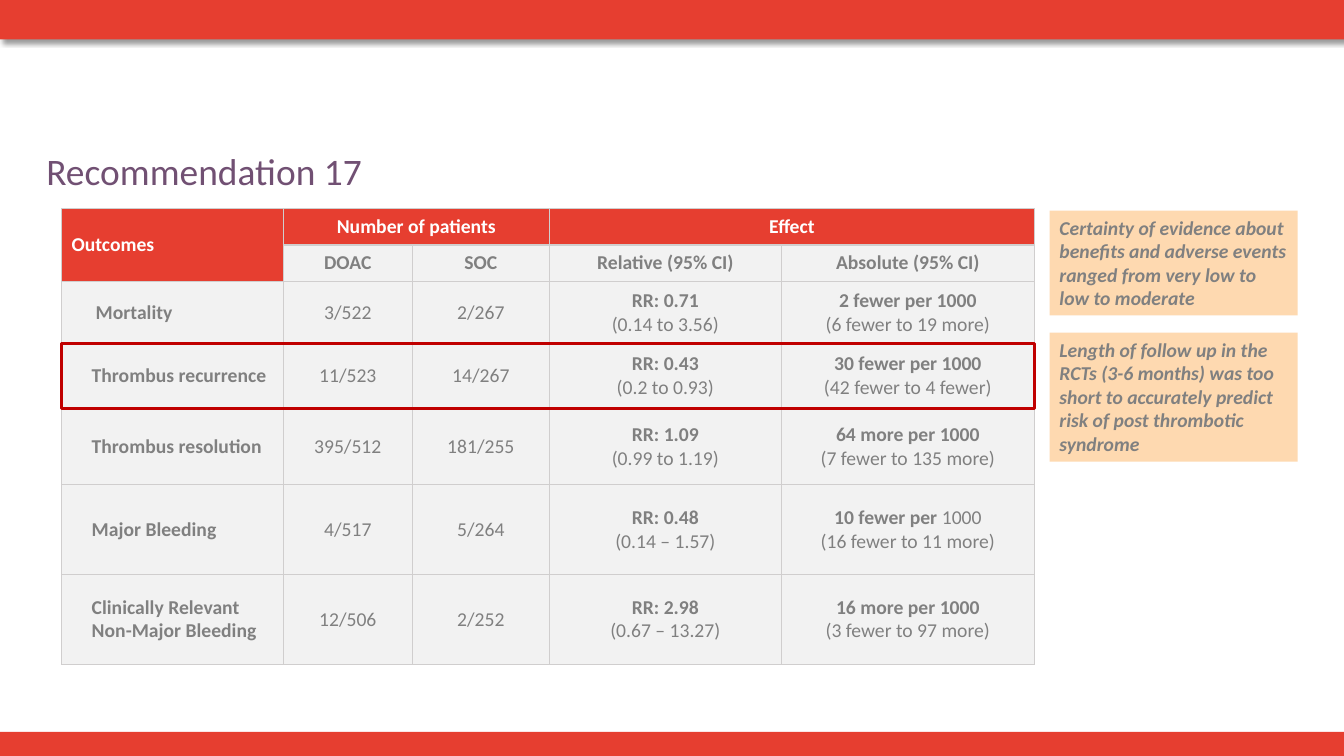
from dataclasses import dataclass

from lxml import etree
from pptx import Presentation
from pptx.dml.color import RGBColor
from pptx.enum.shapes import MSO_SHAPE
from pptx.enum.text import MSO_ANCHOR, PP_ALIGN
from pptx.oxml.ns import qn
from pptx.util import Inches, Pt

RECTANGLE = MSO_SHAPE.RECTANGLE
MIDDLE, TOP = MSO_ANCHOR.MIDDLE, MSO_ANCHOR.TOP
LEFT, CENTER = PP_ALIGN.LEFT, PP_ALIGN.CENTER

SLIDE_WIDTH, SLIDE_HEIGHT = 13.33, 7.5
TABLE_LEFT, TABLE_TOP = 0.61, 2.07
COLUMNS = [2.2, 1.28, 1.36, 2.3, 2.51]
ROWS = [0.36, 0.36, 0.62, 0.64, 0.76, 0.89, 0.89]
TABLE_WIDTH = sum(COLUMNS)
HIGHLIGHTED_ROW = 3
NOTE_LEFT, NOTE_WIDTH = TABLE_LEFT + TABLE_WIDTH + 0.15, 2.46
OUTCOME_INDENT = 0.3

HEADINGS = [
    ("Outcomes", (0, 0), (1, 0)),
    ("Number of patients", (0, 1), (0, 2)),
    ("Effect", (0, 3), (0, 4)),
]
SUBHEADINGS = ["DOAC", "SOC", "Relative (95% CI)", "Absolute (95% CI)"]
OUTCOMES = [
    ("Mortality", "3/522", "2/267",
     "RR: 0.71\n(0.14 to 3.56)", "2 fewer per 1000\n(6 fewer to 19 more)"),
    ("Thrombus recurrence", "11/523", "14/267",
     "RR: 0.43\n(0.2 to 0.93)", "30 fewer per 1000\n(42 fewer to 4 fewer)"),
    ("Thrombus resolution", "395/512", "181/255",
     "RR: 1.09\n(0.99 to 1.19)", "64 more per 1000\n(7 fewer to 135 more)"),
    ("Major Bleeding", "4/517", "5/264",
     "RR: 0.48\n(0.14 – 1.57)", "10 fewer per |1000\n(16 fewer to 11 more)"),
    ("Clinically Relevant Non-Major Bleeding", "12/506", "2/252",
     "RR: 2.98\n(0.67 – 13.27)", "16 more per 1000\n(3 fewer to 97 more)"),
]
NOTES = [
    ("Certainty of evidence about benefits and adverse events "
     "ranged from very low to low to moderate", 2.09, 1.04),
    ("Length of follow up in the RCTs (3-6 months) was too short to "
     "accurately predict risk of post thrombotic syndrome", 3.3, 1.28),
]


@dataclass(frozen=True)
class Theme:
    """Colours and type sizes of the slide."""
    font: str = "Calibri"
    title_size: float = 26.7
    body_size: float = 14
    red: str = "E63E30"
    highlight: str = "C00000"
    purple: str = "715073"
    grey: str = "808080"
    white: str = "FFFFFF"
    cell: str = "F2F2F2"
    border: str = "D0CECE"
    note: str = "FED9B0"


THEME = Theme()


def style_font(font, size, color, bold=False, italic=False):
    """Apply the theme typeface with the given look."""
    font.name = THEME.font
    font.size = Pt(size)
    font.color.rgb = RGBColor.from_string(color)
    font.bold = bold
    font.italic = italic


def add_box(slide, left, top, width, height, fill=None, line=None):
    """Add a flat rectangle with an optional fill and outline."""
    box = slide.shapes.add_shape(
        RECTANGLE, Inches(left), Inches(top), Inches(width), Inches(height))
    box.shadow.inherit = False
    if fill:
        box.fill.solid()
        box.fill.fore_color.rgb = RGBColor.from_string(fill)
    else:
        box.fill.background()
    if line:
        box.line.color.rgb = RGBColor.from_string(line)
        box.line.width = Pt(2.25)
    else:
        box.line.fill.background()
    return box


def add_drop_shadow(shape):
    """Give a shape a soft shadow towards the lower right."""
    effects = shape._element.spPr.find(qn("a:effectLst"))
    shadow = etree.SubElement(
        effects, qn("a:outerShdw"), blurRad=str(Pt(4)), dist=str(Pt(3)),
        dir="2700000", algn="tl", rotWithShape="0")
    color = etree.SubElement(shadow, qn("a:srgbClr"), val="000000")
    etree.SubElement(color, qn("a:alpha"), val="40000")


def add_title(slide, text):
    """Add the slide title."""
    title = slide.shapes.add_textbox(
        Inches(0.46), Inches(1.47), Inches(12), Inches(0.78))
    frame = title.text_frame
    frame.word_wrap = True
    frame.margin_left = frame.margin_right = 0
    frame.margin_top = frame.margin_bottom = 0
    frame.text = text
    style_font(frame.paragraphs[0].runs[0].font, THEME.title_size, THEME.purple)


def add_note(slide, text, top, height):
    """Add a remark beside the table."""
    note = add_box(slide, NOTE_LEFT, top, NOTE_WIDTH, height, THEME.note)
    frame = note.text_frame
    frame.word_wrap = True
    frame.vertical_anchor = TOP
    frame.text = text
    paragraph = frame.paragraphs[0]
    paragraph.alignment = LEFT
    style_font(paragraph.runs[0].font, THEME.body_size, THEME.grey, True, True)


def style_cell(cell, fill):
    """Set the borders, fill and anchor of a table cell."""
    properties = cell._tc.get_or_add_tcPr()
    for side in ("a:lnL", "a:lnR", "a:lnT", "a:lnB"):
        line = etree.SubElement(properties, qn(side), w=str(Pt(1)))
        solid = etree.SubElement(line, qn("a:solidFill"))
        etree.SubElement(solid, qn("a:srgbClr"), val=THEME.border)
    cell.fill.solid()
    cell.fill.fore_color.rgb = RGBColor.from_string(fill)
    cell.vertical_anchor = MIDDLE


def write_cell(cell, text, color, bold=True, alignment=CENTER):
    """Write lines, bold only in the first and up to any bar."""
    frame = cell.text_frame
    for index, line in enumerate(text.split("\n")):
        paragraph = frame.add_paragraph() if index else frame.paragraphs[0]
        paragraph.alignment = alignment
        for part, words in enumerate(line.split("|")):
            run = paragraph.add_run()
            run.text = words
            is_bold = bold and index == 0 and part == 0
            style_font(run.font, THEME.body_size, color, is_bold)


def add_outcome_table(slide):
    """Add the table of outcomes and effects."""
    table = slide.shapes.add_table(
        len(ROWS), len(COLUMNS), Inches(TABLE_LEFT), Inches(TABLE_TOP),
        Inches(TABLE_WIDTH), Inches(sum(ROWS))).table
    table.first_row = table.horz_banding = False
    for column, width in zip(table.columns, COLUMNS):
        column.width = Inches(width)
    for index, (row, height) in enumerate(zip(table.rows, ROWS)):
        row.height = Inches(height)
        for cell in row.cells:
            style_cell(cell, THEME.cell if index else THEME.red)
    for text, start, end in HEADINGS:
        heading = table.cell(*start)
        heading.merge(table.cell(*end))
        alignment = CENTER if start[1] else LEFT
        write_cell(heading, text, THEME.white, alignment=alignment)
    for column, text in enumerate(SUBHEADINGS, 1):
        write_cell(table.cell(1, column), text, THEME.grey)
    for row, values in enumerate(OUTCOMES, 2):
        for column, text in enumerate(values):
            alignment = CENTER if column else LEFT
            write_cell(table.cell(row, column), text, THEME.grey,
                       column not in (1, 2), alignment)
        table.cell(row, 0).margin_left = Inches(OUTCOME_INDENT)
    table.cell(2, 0).margin_left = Inches(OUTCOME_INDENT + 0.04)


def main():
    """Build and save the slide."""
    presentation = Presentation()
    presentation.slide_width = Inches(SLIDE_WIDTH)
    presentation.slide_height = Inches(SLIDE_HEIGHT)
    slide = presentation.slides.add_slide(presentation.slide_layouts[6])
    add_box(slide, 0, SLIDE_HEIGHT - 0.24, SLIDE_WIDTH, 0.24, THEME.red)
    add_drop_shadow(add_box(slide, 0, 0, SLIDE_WIDTH, 0.39, THEME.red))
    add_title(slide, "Recommendation 17")
    add_outcome_table(slide)
    add_box(slide, TABLE_LEFT, TABLE_TOP + sum(ROWS[:HIGHLIGHTED_ROW]),
            TABLE_WIDTH, ROWS[HIGHLIGHTED_ROW], line=THEME.highlight)
    for note in NOTES:
        add_note(slide, *note)
    presentation.save("out.pptx")


if __name__ == "__main__":
    main()
